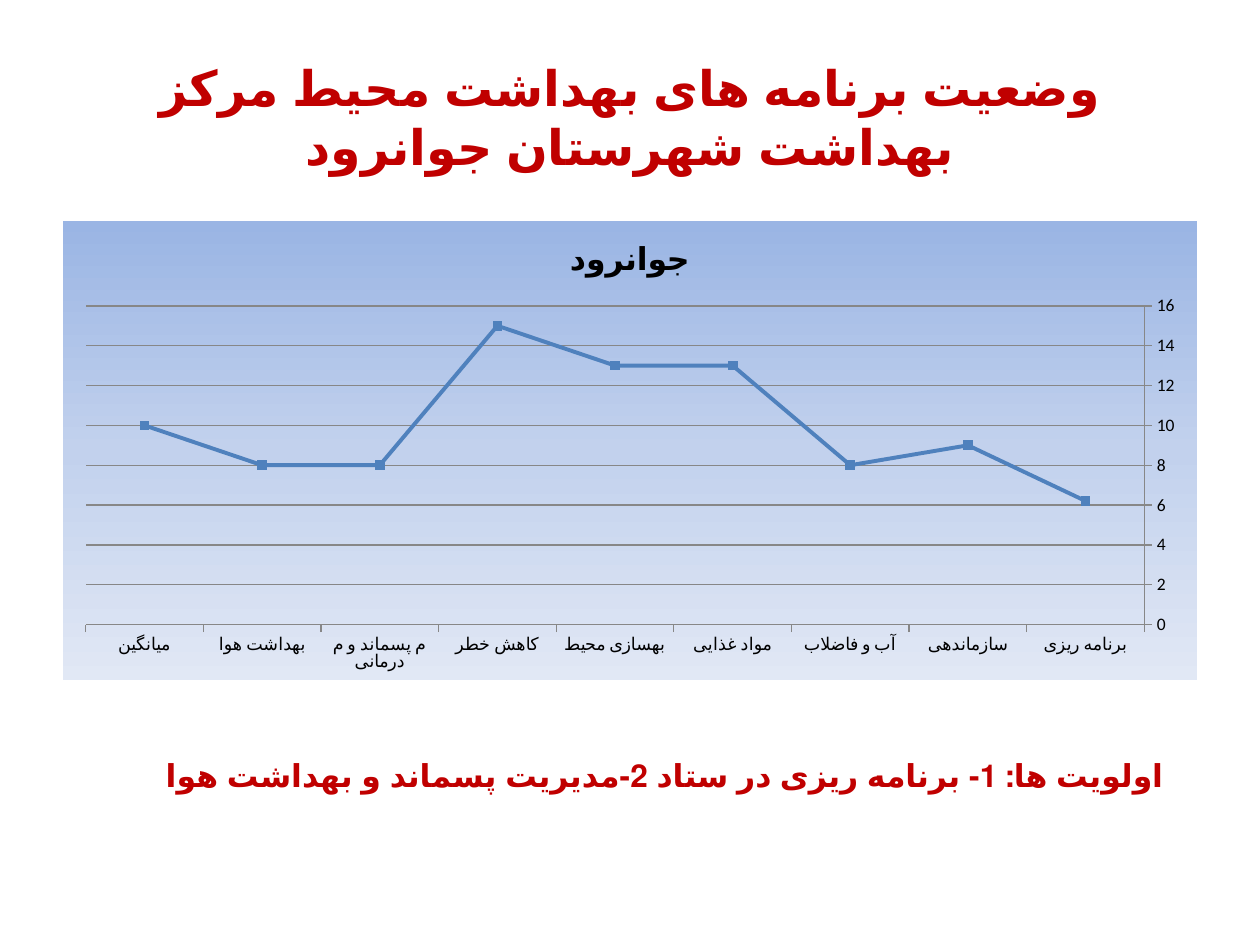
from pptx import Presentation
from pptx.chart.data import CategoryChartData
from pptx.dml.color import RGBColor
from pptx.enum.chart import XL_CHART_TYPE, XL_MARKER_STYLE, XL_TICK_MARK
from pptx.enum.lang import MSO_LANGUAGE_ID
from pptx.enum.text import MSO_ANCHOR, PP_ALIGN
from pptx.oxml import parse_xml
from pptx.oxml.ns import nsdecls
from pptx.util import Inches, Pt

KIND = XL_CHART_TYPE.LINE_MARKERS_STACKED
SQUARE = XL_MARKER_STYLE.SQUARE
OUT = XL_TICK_MARK.OUTSIDE
FARSI = MSO_LANGUAGE_ID.FARSI
CENTER, RIGHT = PP_ALIGN.CENTER, PP_ALIGN.RIGHT
MIDDLE, TOP = MSO_ANCHOR.MIDDLE, MSO_ANCHOR.TOP

RED = RGBColor(0xC0, 0x00, 0x00)
BLUE = RGBColor(0x4F, 0x81, 0xBD)
GRAY = RGBColor(0x87, 0x87, 0x87)
BLACK = RGBColor(0, 0, 0)
FONT = "Calibri"

# Content
TEXTS = [
    # text, box, size, align, anchor
    ("وضعیت برنامه های بهداشت محیط مرکز بهداشت شهرستان جوانرود",
     (0.5, 0.3, 9, 1.25), 28, CENTER, MIDDLE),
    ("اولویت ها: 1- برنامه ریزی در ستاد 2-مدیریت پسماند و بهداشت هوا ",
     (0.59, 5.95, 8.74, 0.4), 18, RIGHT, TOP),
]
TITLE = "جوانرود"
SCORES = {
    "برنامه ریزی": 6.2,
    "سازماندهی": 9,
    "آب و فاضلاب": 8,
    "مواد غذایی": 13,
    "بهسازی محیط": 13,
    "کاهش خطر": 15,
    "م پسماند و م درمانی": 8,
    "بهداشت هوا": 8,
    "میانگین": 10,
}
STOPS = [(0, "9AB5E4"), (50, "C2D1ED"), (100, "E1E8F5")]


def style(font, size, color, bold):
    font.name, font.size, font.bold = FONT, Pt(size), bold
    font.color.rgb = color


def add_text(slide, text, box, size, align, anchor):
    frame = slide.shapes.add_textbox(*map(Inches, box)).text_frame
    frame.word_wrap = True
    frame.vertical_anchor = anchor
    para = frame.paragraphs[0]
    para.alignment = align
    para._p.get_or_add_pPr().set("rtl", "1")
    run = para.add_run()
    run.text = text
    style(run.font, size, RED, True)
    run.font.language_id = FARSI


def fill_chart(chart):
    """Give the chart area a vertical gradient and no border."""
    stops = "".join(f'<a:gs pos="{pos * 1000}"><a:srgbClr val="{hue}"/></a:gs>'
                    for pos, hue in STOPS)
    area = parse_xml(
        f'<c:spPr {nsdecls("c", "a")}><a:gradFill><a:gsLst>{stops}</a:gsLst>'
        '<a:lin ang="5400000" scaled="0"/></a:gradFill>'
        '<a:ln><a:noFill/></a:ln></c:spPr>')
    chart._chartSpace.chart.addnext(area)


def add_chart(slide):
    data = CategoryChartData()
    data.categories = list(SCORES)
    data.add_series("Series 1", list(SCORES.values()))
    box = map(Inches, (0.5, 1.75, 9, 3.65))
    chart = slide.shapes.add_chart(KIND, *box, data).chart
    style(chart.font, 10, BLACK, False)
    chart.has_legend = False
    fill_chart(chart)

    # Title
    chart.has_title = True
    chart.chart_title.include_in_layout = False
    run = chart.chart_title.text_frame.paragraphs[0].add_run()
    run.text = TITLE
    style(run.font, 18, BLACK, True)

    # Axes, read from right to left
    cat, val = chart.category_axis, chart.value_axis
    cat.reverse_order = True
    cat.has_major_gridlines = False
    val.has_major_gridlines = True
    val.minimum_scale, val.maximum_scale, val.major_unit = 0, 16, 2
    for axis in (cat, val):
        axis.major_tick_mark = OUT
        axis.format.line.color.rgb = GRAY
    val.major_gridlines.format.line.color.rgb = GRAY

    # Line and markers
    chart.plots[0].vary_by_categories = False
    line = chart.plots[0].series[0]
    line.smooth = False
    line.format.line.color.rgb = BLUE
    line.format.line.width = Pt(2.25)
    mark = line.marker
    mark.style, mark.size = SQUARE, 5
    mark.format.fill.solid()
    mark.format.fill.fore_color.rgb = BLUE
    mark.format.line.color.rgb = BLUE


def main():
    deck = Presentation()
    deck.slide_width, deck.slide_height = Inches(10), Inches(7.5)
    slide = deck.slides.add_slide(deck.slide_layouts[6])
    add_chart(slide)
    for item in TEXTS:
        add_text(slide, *item)
    deck.save("out.pptx")


if __name__ == "__main__":
    main()
